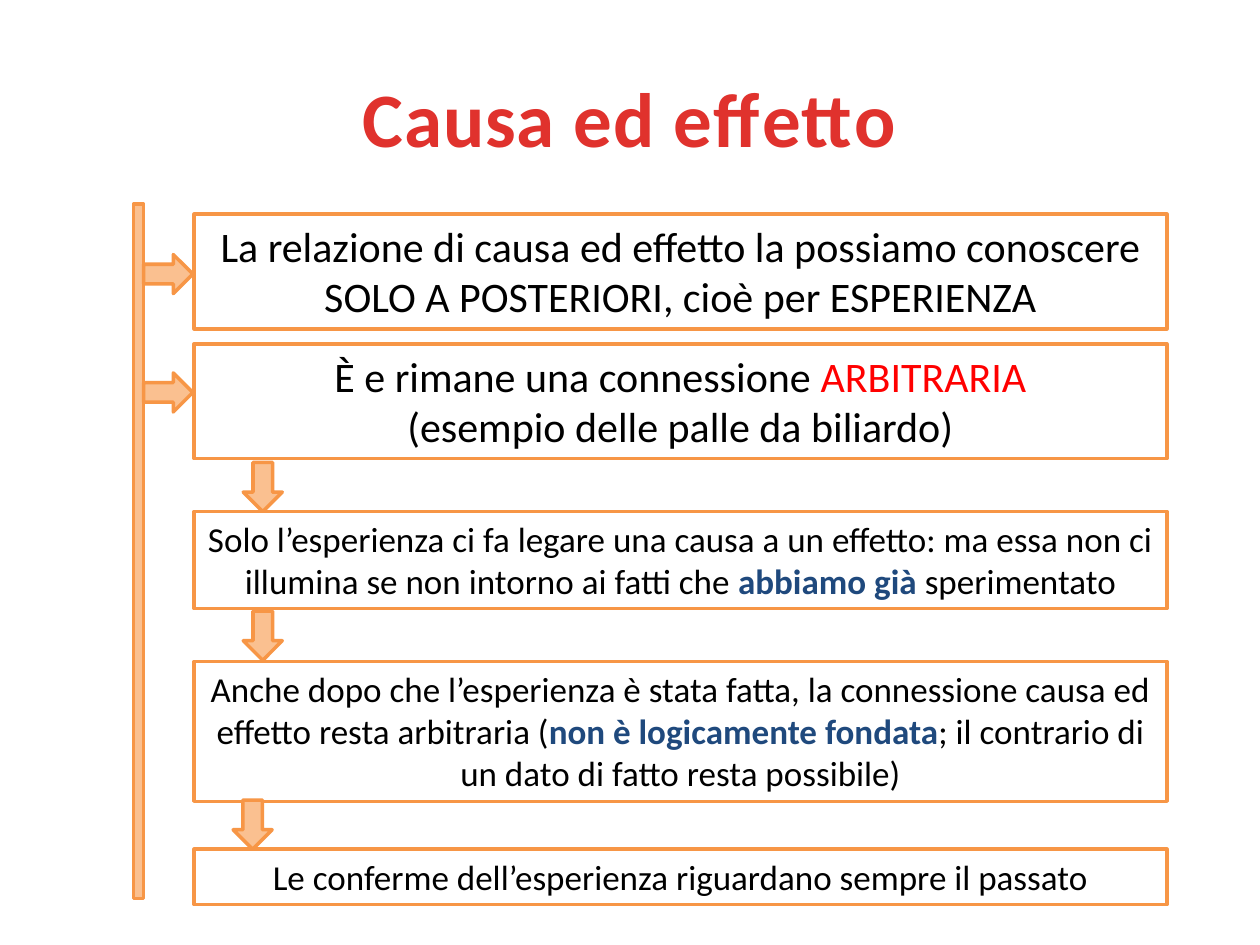
from pptx import Presentation
from pptx import util as u
from pptx.dml.color import RGBColor
from pptx.enum import shapes, text

EDGE = "F79646"
PEACH = "FAC090"
BLACK = "000000"
RED = "FF0000"
BLUE = "1F497D"
LONG, WIDE = 0.39, 0.31


def paint(target, color):
    target.rgb = RGBColor.from_string(color)


def block(slide, kind, box, fill):
    shape = slide.shapes.add_shape(kind, *map(u.Inches, box))
    shape.shadow.inherit = False
    shape.fill.solid()
    paint(shape.fill.fore_color, fill)
    paint(shape.line.color, EDGE)
    shape.line.width = u.Pt(2)
    return shape


def style(para, size, color):
    para.alignment = text.PP_ALIGN.CENTER
    para.font.name = "Calibri"
    para.font.size = u.Pt(size)
    paint(para.font.color, color)


def title(slide, box, words):
    frame = slide.shapes.add_textbox(*map(u.Inches, box)).text_frame
    frame.word_wrap = True
    frame.vertical_anchor = text.MSO_ANCHOR.MIDDLE
    para = frame.paragraphs[0]
    style(para, 44, "E0322D")
    para.font.bold = True
    run = para.add_run()
    run.text = words
    run._r.get_or_add_rPr().set("spc", "50")


def panel(slide, box, size, lines):
    frame = block(slide, shapes.MSO_SHAPE.RECTANGLE, box, "FFFFFF").text_frame
    frame.word_wrap = True
    frame.vertical_anchor = text.MSO_ANCHOR.TOP
    frame.auto_size = text.MSO_AUTO_SIZE.SHAPE_TO_FIT_TEXT
    for i, line in enumerate(lines):
        para = frame.add_paragraph() if i else frame.paragraphs[0]
        style(para, size, BLACK)
        for words, color in line:
            run = para.add_run()
            run.text = words
            paint(run.font.color, color)
            run.font.bold = color == BLUE


def arrow(slide, left, top, turn=0):
    box = (left, top, LONG, WIDE)
    block(slide, shapes.MSO_SHAPE.RIGHT_ARROW, box, PEACH).rotation = turn


def flow(slide, left, top, width):
    bar = (left, top, 0.08, 5.51)
    block(slide, shapes.MSO_SHAPE.RECTANGLE, bar, PEACH)
    edge = left + 0.48
    steps = [
        (0.08, 0.91, 24, (0.08, 0.4, 0), [
            [("La relazione di causa ed effetto la possiamo conoscere "
              "SOLO A POSTERIORI, cioè per ESPERIENZA", BLACK)]]),
        (1.11, 0.91, 24, (0.08, 1.34, 0), [
            [("È e rimane una connessione ", BLACK), ("ARBITRARIA", RED)],
            [("(esempio delle palle da biliardo)", BLACK)]]),
        (2.44, 0.77, 20, (0.83, 2.09, 90), [
            [("Solo l’esperienza ci fa legare una causa a un effetto: ma essa "
              "non ci illumina se non intorno ai fatti che ", BLACK),
             ("abbiamo già ", BLUE), ("sperimentato", BLACK)]]),
        (3.63, 1.11, 20, (0.83, 3.27, 90), [
            [("Anche dopo che l’esperienza è stata fatta, la connessione causa "
              "ed effetto resta arbitraria (", BLACK),
             ("non è logicamente fondata", BLUE),
             ("; il contrario di un dato di fatto resta possibile)", BLACK)]]),
        (5.12, 0.44, 20, (0.75, 4.77, 90), [
            [("Le conferme dell’esperienza riguardano sempre il passato",
              BLACK)]]),
    ]
    for down, high, size, (dx, dy, turn), lines in steps:
        arrow(slide, left + dx, top + dy, turn)
        panel(slide, (edge, top + down, width - 0.48, high), size, lines)


def main():
    deck = Presentation()
    deck.slide_width = u.Inches(10)
    deck.slide_height = u.Inches(7.5)
    slide = deck.slides.add_slide(deck.slide_layouts[6])
    title(slide, (0.5, 0.3, 9, 1.25), "Causa ed effetto")
    flow(slide, 1.06, 1.62, 8.2)
    deck.save("out.pptx")


if __name__ == "__main__":
    main()
